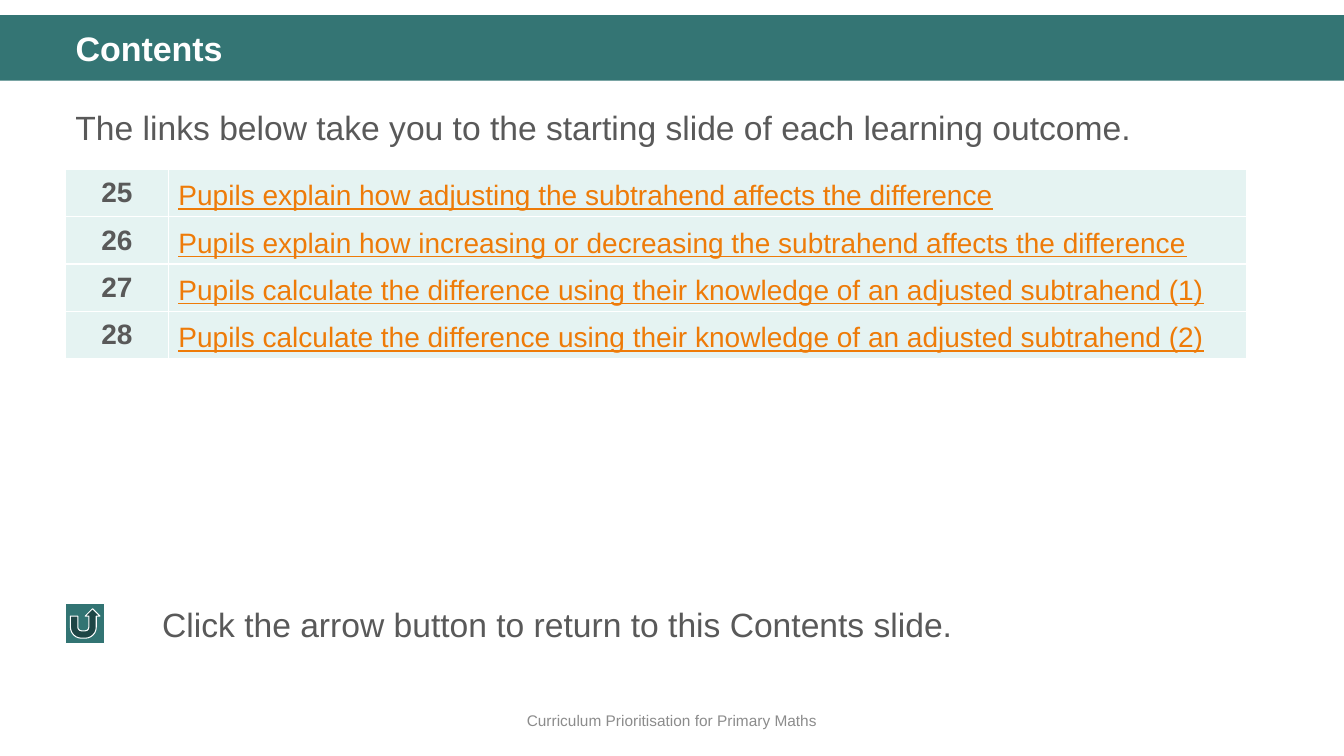
import dataclasses

import pptx
import pptx.dml.color
import pptx.enum.shapes
import pptx.enum.text
import pptx.util

EMU_PER_PX = 9144  # 100 px to the inch
FONT = "Arial"
COLOURS = {
    "band": "347574",
    "button": "327473",
    "cell": "E5F3F2",
    "text": "595959",
    "link": "EE7B08",
    "footer": "8C8C8C",
    "white": "FFFFFF",
}
ALIGN = pptx.enum.text.PP_ALIGN
ANCHOR = pptx.enum.text.MSO_ANCHOR
SHAPE = pptx.enum.shapes.MSO_SHAPE


@dataclasses.dataclass(frozen=True)
class Box:
    left: int
    top: int
    width: int
    height: int

    def emu(self) -> tuple[int, ...]:
        return tuple(px(side) for side in dataclasses.astuple(self))


@dataclasses.dataclass(frozen=True)
class Style:
    size: float
    colour: str = "text"
    bold: bool = False
    underline: bool = False
    align: ALIGN = ALIGN.LEFT
    anchor: ANCHOR = ANCHOR.TOP
    line_spacing: float = 1.0
    space_before: float = 0


@dataclasses.dataclass(frozen=True)
class Note:
    text: str
    box: Box
    style: Style


@dataclasses.dataclass(frozen=True)
class Outcome:
    number: int
    text: str


TITLE = Note("Contents", Box(65, 27, 1218, 47),
             Style(24.3, "white", bold=True, line_spacing=0.9))
NOTES = [
    Note("Curriculum Prioritisation for Primary Maths", Box(0, 695, 1333, 40),
         Style(11, "footer", align=ALIGN.CENTER, anchor=ANCHOR.MIDDLE)),
    Note("The links below take you to the starting slide of each learning outcome.",
         Box(65, 93, 1218, 351), Style(24, line_spacing=1.2, space_before=10)),
    Note("Click the arrow button to return to this Contents slide.",
         Box(151, 594, 1132, 50), Style(24)),
]
OUTCOMES = [
    Outcome(25, "Pupils explain how adjusting the subtrahend affects the difference"),
    Outcome(26, "Pupils explain how increasing or decreasing the subtrahend affects the difference"),
    Outcome(27, "Pupils calculate the difference using their knowledge of an adjusted subtrahend (1)"),
    Outcome(28, "Pupils calculate the difference using their knowledge of an adjusted subtrahend (2)"),
]
NUMBER_STYLE = Style(20, bold=True, align=ALIGN.CENTER, anchor=ANCHOR.MIDDLE)
LINK_STYLE = Style(20, "link", underline=True, anchor=ANCHOR.MIDDLE, line_spacing=1.2)
COLUMN_WIDTHS = (102, 1069)
ROW_HEIGHT = 47
CELL_MARGIN = 4


def px(length: int) -> int:
    return pptx.util.Emu(length * EMU_PER_PX)


def colour(name: str) -> pptx.dml.color.RGBColor:
    return pptx.dml.color.RGBColor.from_string(COLOURS[name])


def write(frame, text: str, style: Style) -> None:
    para = frame.paragraphs[0]
    para.alignment = style.align
    para.line_spacing = style.line_spacing
    para.space_before = pptx.util.Pt(style.space_before)
    span = para.add_run()
    span.text = text
    span.font.name = FONT
    span.font.size = pptx.util.Pt(style.size)
    span.font.bold = style.bold
    span.font.underline = style.underline
    span.font.color.rgb = colour(style.colour)


def fill_box(box, note: Note) -> None:
    """Place a text box or placeholder and write its text."""
    box.left, box.top, box.width, box.height = note.box.emu()
    frame = box.text_frame
    frame.word_wrap = True
    frame.auto_size = pptx.enum.text.MSO_AUTO_SIZE.NONE
    frame.vertical_anchor = note.style.anchor
    write(frame, note.text, note.style)


def add_block(page, kind: SHAPE, box: Box, fill: str):
    block = page.shapes.add_shape(kind, *box.emu())
    block.shadow.inherit = False
    block.fill.solid()
    block.fill.fore_color.rgb = colour(fill)
    block.line.fill.background()
    return block


def add_outcomes(page) -> None:
    box = Box(65, 168, sum(COLUMN_WIDTHS), ROW_HEIGHT * len(OUTCOMES))
    table = page.shapes.add_table(len(OUTCOMES), len(COLUMN_WIDTHS), *box.emu()).table
    table.horz_banding = False
    for column, width in zip(table.columns, COLUMN_WIDTHS):
        column.width = px(width)
    for row, outcome in zip(table.rows, OUTCOMES):
        row.height = px(ROW_HEIGHT)
        texts = (str(outcome.number), outcome.text)
        for cell, text, style in zip(row.cells, texts, (NUMBER_STYLE, LINK_STYLE)):
            cell.fill.solid()
            cell.fill.fore_color.rgb = colour("cell")
            cell.vertical_anchor = style.anchor
            cell.margin_top = cell.margin_bottom = px(CELL_MARGIN)
            write(cell.text_frame, text, style)


def main() -> None:
    deck = pptx.Presentation()
    deck.slide_width, deck.slide_height = px(1333), px(750)
    page = deck.slides.add_slide(deck.slide_layouts.get_by_name("Title Only"))

    add_block(page, SHAPE.RECTANGLE, Box(0, 15, 1333, 65), "band")
    for note in NOTES:
        fill_box(page.shapes.add_textbox(*note.box.emu()), note)
    add_outcomes(page)
    button = add_block(page, SHAPE.ACTION_BUTTON_RETURN, Box(65, 599, 39, 39), "button")
    button.line.color.rgb = colour("white")
    button.line.width = pptx.util.Pt(0.75)

    title = page.shapes.title
    fill_box(title, TITLE)
    page.shapes.element.append(title.element)  # bring the title in front of the band
    deck.save("out.pptx")


if __name__ == "__main__":
    main()
